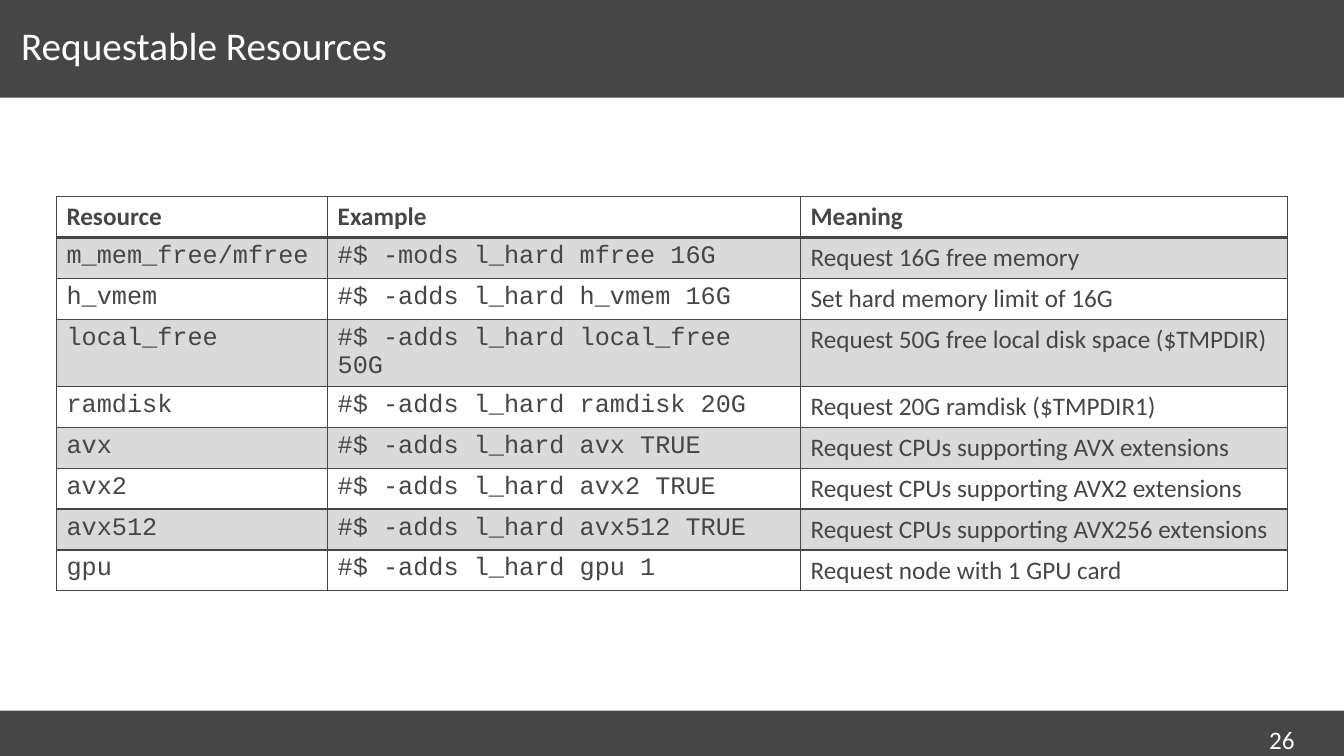
from dataclasses import dataclass
from typing import NamedTuple

from lxml.etree import SubElement
from pptx import Presentation
from pptx.dml.color import RGBColor
from pptx.enum.shapes import MSO_SHAPE
from pptx.enum.text import MSO_ANCHOR
from pptx.oxml.ns import qn
from pptx.slide import Slide
from pptx.table import _Cell
from pptx.text.text import TextFrame
from pptx.util import Inches, Pt


@dataclass(frozen=True)
class Theme:
    dark: str = "464646"
    white: str = "FFFFFF"
    stripe: str = "DADADA"
    body_font: str = "Calibri"
    code_font: str = "Courier New"
    title_size: int = 28
    body_size: int = 18
    rule: float = 1
    header_rule: float = 2


class Band(NamedTuple):
    top: float
    height: float


class Resource(NamedTuple):
    name: str
    example: str
    meaning: str


THEME = Theme()
SLIDE_WIDTH, SLIDE_HEIGHT = 13.33, 7.5
BANDS = [Band(7.05, 0.45), Band(0, 0.97)]
COLUMN_WIDTHS = [2.69, 4.69, 4.83]
HEADINGS = Resource("Resource", "Example", "Meaning")
RESOURCES = [
    Resource("m_mem_free/mfree", "#$ -mods l_hard mfree 16G", "Request 16G free memory"),
    Resource("h_vmem", "#$ -adds l_hard h_vmem 16G", "Set hard memory limit of 16G"),
    Resource("local_free", "#$ -adds l_hard local_free 50G",
             "Request 50G free local disk space ($TMPDIR)"),
    Resource("ramdisk", "#$ -adds l_hard ramdisk 20G", "Request 20G ramdisk ($TMPDIR1)"),
    Resource("avx", "#$ -adds l_hard avx TRUE", "Request CPUs supporting AVX extensions"),
    Resource("avx2", "#$ -adds l_hard avx2 TRUE", "Request CPUs supporting AVX2 extensions"),
    Resource("avx512", "#$ -adds l_hard avx512 TRUE",
             "Request CPUs supporting AVX256 extensions"),
    Resource("gpu", "#$ -adds l_hard gpu 1", "Request node with 1 GPU card"),
]


def write(frame: TextFrame, text: str, *, font: str = THEME.body_font,
          size: int = THEME.body_size, color: str = THEME.dark,
          bold: bool = False, line_spacing: float = 1.0) -> None:
    paragraph = frame.paragraphs[0]
    paragraph.line_spacing = line_spacing
    run = paragraph.add_run()
    run.text = text
    run.font.name = font
    run.font.size = Pt(size)
    run.font.bold = bold
    run.font.color.rgb = RGBColor.from_string(color)


def draw_band(slide: Slide, band: Band) -> None:
    bar = slide.shapes.add_shape(MSO_SHAPE.RECTANGLE, 0, Inches(band.top),
                                 Inches(SLIDE_WIDTH), Inches(band.height))
    bar.shadow.inherit = False
    bar.fill.solid()
    bar.fill.fore_color.rgb = RGBColor.from_string(THEME.dark)
    bar.line.fill.background()


def add_text_frame(slide: Slide, left: float, top: float,
                   width: float, height: float) -> TextFrame:
    frame = slide.shapes.add_textbox(Inches(left), Inches(top),
                                     Inches(width), Inches(height)).text_frame
    frame.word_wrap = True
    return frame


def set_borders(cell: _Cell, top: float, bottom: float) -> None:
    properties = cell._tc.get_or_add_tcPr()
    sides = {"L": THEME.rule, "R": THEME.rule, "T": top, "B": bottom}
    for side, width in sides.items():
        border = SubElement(properties, qn(f"a:ln{side}"), w=str(Pt(width)))
        fill = SubElement(border, qn("a:solidFill"))
        SubElement(fill, qn("a:srgbClr"), val=THEME.dark)


def draw_table(slide: Slide, rows: list[Resource]) -> None:
    table = slide.shapes.add_table(len(rows), len(COLUMN_WIDTHS), Inches(0.56), Inches(1.95),
                                   Inches(sum(COLUMN_WIDTHS)), Inches(3.65)).table
    table.horz_banding = False
    for column, width in zip(table.columns, COLUMN_WIDTHS):
        column.width = Inches(width)
    for row, resource in enumerate(rows):
        is_header = row == 0
        for column, text in enumerate(resource):
            cell = table.cell(row, column)
            is_code = not is_header and column < 2
            write(cell.text_frame, text, bold=is_header,
                  font=THEME.code_font if is_code else THEME.body_font)
            set_borders(cell, top=THEME.header_rule if row == 1 else THEME.rule,
                        bottom=THEME.header_rule if is_header else THEME.rule)
            cell.fill.solid()
            cell.fill.fore_color.rgb = RGBColor.from_string(
                THEME.stripe if row % 2 else THEME.white)


def main() -> None:
    deck = Presentation()
    deck.slide_width = Inches(SLIDE_WIDTH)
    deck.slide_height = Inches(SLIDE_HEIGHT)
    slide = deck.slides.add_slide(deck.slide_layouts[6])

    # Footer and header bands
    for band in BANDS:
        draw_band(slide, band)

    # Resource table
    draw_table(slide, [HEADINGS, *RESOURCES])

    # Page number
    page_number = add_text_frame(slide, 12.49, 7.14, 0.7, 0.25)
    write(page_number, "26", color=THEME.white)

    # Title
    title = add_text_frame(slide, 0.21, 0.17, 11.52, 0.64)
    title.margin_left = title.margin_right = 0
    title.vertical_anchor = MSO_ANCHOR.MIDDLE
    write(title, "Requestable Resources", size=THEME.title_size,
          color=THEME.white, line_spacing=0.8)

    deck.save("out.pptx")


if __name__ == "__main__":
    main()
